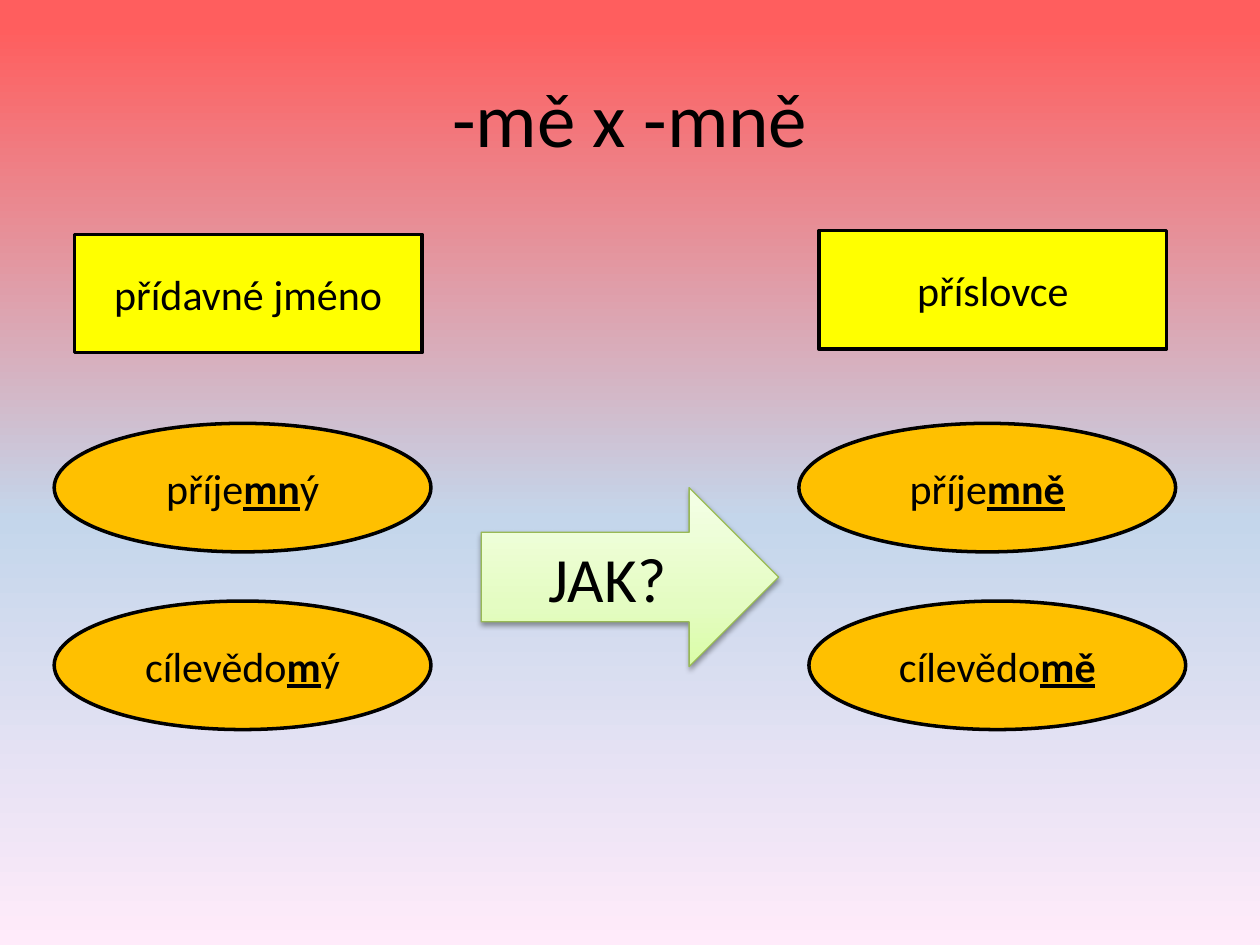
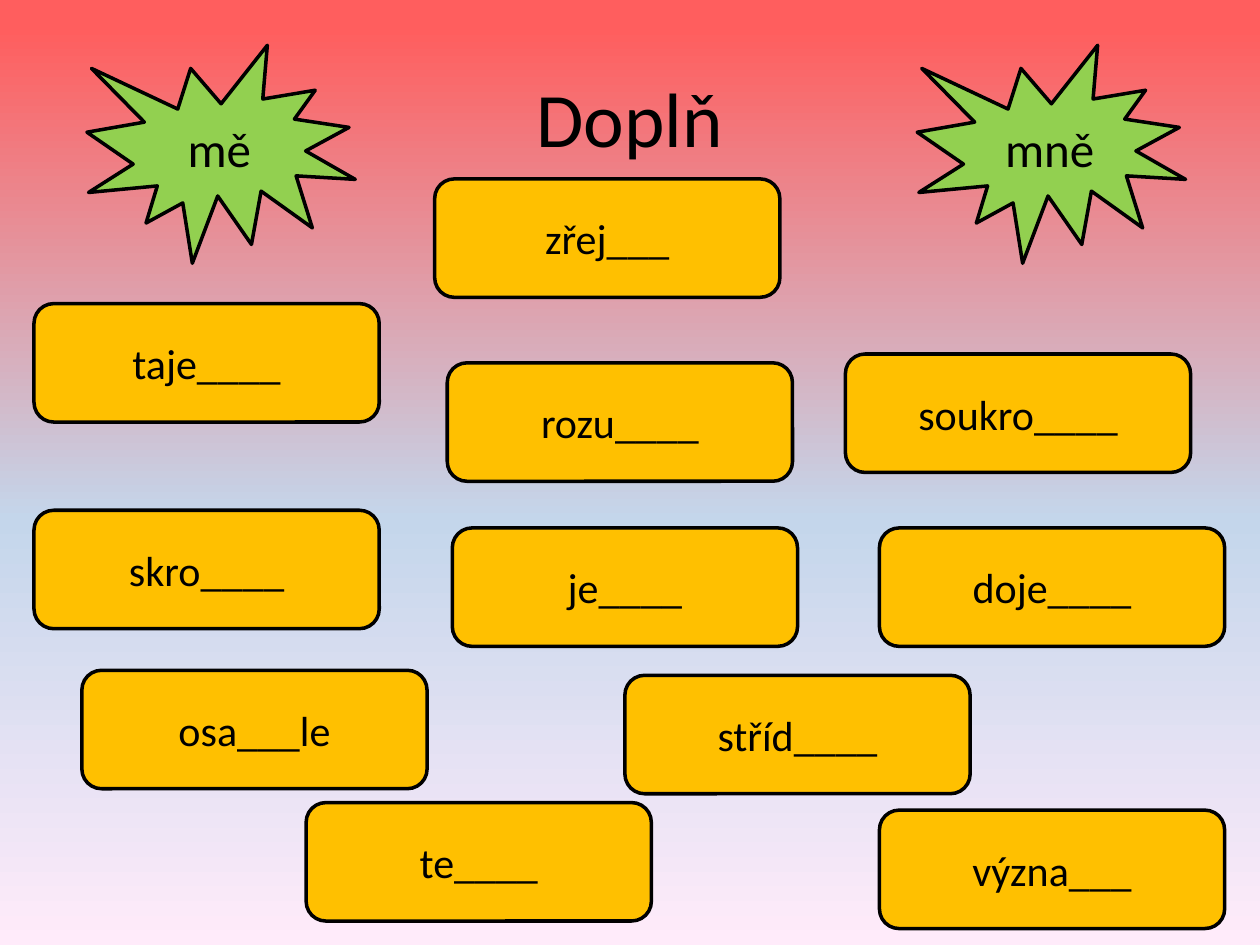
"""Build two Czech spelling slides about -mě and -mně."""
from dataclasses import dataclass

from lxml.etree import SubElement
from pptx import Presentation
from pptx.dml.color import RGBColor
from pptx.dml.fill import FillFormat
from pptx.enum.shapes import MSO_SHAPE
from pptx.enum.text import MSO_ANCHOR, PP_ALIGN
from pptx.oxml.ns import qn
from pptx.oxml.xmlchemy import BaseOxmlElement
from pptx.presentation import Presentation as Deck
from pptx.shapes.autoshape import Shape
from pptx.slide import Slide
from pptx.text.text import TextFrame
from pptx.util import Inches, Pt

FONT = "Calibri"
HUES = {
    "ink": "000000", "head": "FFFF00", "word": "FFC000", "star": "92D050",
    "edge": "98B955", "red": "FF5E5E", "blue": "C4D6EB", "pink": "FFEBFA",
    "lime": "DAFDA7", "mint": "E4FCC2", "pale": "F5FFE7",
}
SKY = [(3, "red"), (55, "blue"), (100, "pink")]
LEAF = [(0, "lime"), (35, "mint"), (100, "pale")]


@dataclass(frozen=True)
class Style:
    form: MSO_SHAPE
    width: float
    height: float
    fill: str
    size: int = 24
    line: str = "ink"
    weight: float = 2


HEAD = Style(MSO_SHAPE.RECTANGLE, 2.76, 0.94, "head")
OVAL = Style(MSO_SHAPE.OVAL, 2.99, 1.02, "word")
CARD = Style(MSO_SHAPE.ROUNDED_RECTANGLE, 2.74, 0.94, "word")
STAR = Style(MSO_SHAPE.EXPLOSION1, 2.13, 1.73, "star", 28)
ARROW = Style(MSO_SHAPE.RIGHT_ARROW, 2.36, 1.42, "mint", 36, "edge", 0.75)


@dataclass(frozen=True)
class Item:
    style: Style
    left: float
    top: float
    text: str


RULE = [
    Item(HEAD, 0.59, 1.86, "přídavné jméno"),
    Item(HEAD, 6.5, 1.83, "příslovce"),
    Item(OVAL, 0.43, 3.36, "příje*mn*ý"),
    Item(OVAL, 6.34, 3.36, "příje*mně*"),
    Item(OVAL, 6.42, 4.77, "cílevědo*mě*"),
    Item(OVAL, 0.43, 4.77, "cílevědo*m*ý"),
]
TASK = [
    Item(STAR, 0.69, 0.36, "mě"),
    Item(STAR, 7.28, 0.36, "mně"),
    Item(CARD, 0.27, 2.41, "taje____"),
    Item(CARD, 3.55, 2.88, "rozu____"),
    Item(CARD, 2.43, 6.37, "te____"),
    Item(CARD, 6.98, 6.43, "význa___"),
    Item(CARD, 0.27, 4.05, "skro____"),
    Item(CARD, 3.59, 4.19, "je____"),
    Item(CARD, 6.98, 4.19, "doje____"),
    Item(CARD, 3.45, 1.42, "zřej___"),
    Item(CARD, 0.65, 5.32, "osa___le"),
    Item(CARD, 4.96, 5.36, "stříd____"),
    Item(CARD, 6.71, 2.81, "soukro____"),
]


def tint(name: str) -> RGBColor:
    return RGBColor.from_string(HUES[name])


def blend(fill: FillFormat, node: BaseOxmlElement,
          stops: list[tuple[int, str]], angle: int) -> None:
    fill.gradient()
    fill.gradient_angle = angle
    group = next(node.iter(qn("a:gsLst")))
    group.clear()
    for place, name in stops:
        stop = SubElement(group, qn("a:gs"), pos=str(place * 1000))
        SubElement(stop, qn("a:srgbClr"), val=HUES[name])


def write(frame: TextFrame, text: str, size: int) -> None:
    frame.word_wrap = True
    frame.vertical_anchor = MSO_ANCHOR.MIDDLE
    para = frame.paragraphs[0]
    para.alignment = PP_ALIGN.CENTER
    for index, part in enumerate(text.split("*")):
        if part:
            run = para.add_run()
            run.text = part
            font = run.font
            font.name, font.size = FONT, Pt(size)
            font.color.rgb = tint("ink")
            font.bold = font.underline = index % 2 == 1


def draw(slide: Slide, item: Item) -> Shape:
    style = item.style
    shape = slide.shapes.add_shape(
        style.form, Inches(item.left), Inches(item.top),
        Inches(style.width), Inches(style.height))
    shape.shadow.inherit = False
    shape.fill.solid()
    shape.fill.fore_color.rgb = tint(style.fill)
    shape.line.color.rgb = tint(style.line)
    shape.line.width = Pt(style.weight)
    write(shape.text_frame, item.text, style.size)
    return shape


def shade(shape: Shape) -> None:
    effects = next(shape.element.iter(qn("a:effectLst")))
    shadow = SubElement(effects, qn("a:outerShdw"), blurRad=str(Pt(3.1)),
                        dist=str(Pt(1.6)), dir="5400000", rotWithShape="0")
    color = SubElement(shadow, qn("a:srgbClr"), val=HUES["ink"])
    SubElement(color, qn("a:alpha"), val="38000")


def start(deck: Deck, title: str, items: list[Item]) -> Slide:
    slide = deck.slides.add_slide(deck.slide_layouts[6])
    blend(slide.background.fill, slide.element, SKY, 270)
    box = slide.shapes.add_textbox(
        Inches(0.5), Inches(0.3), Inches(9), Inches(1.25))
    write(box.text_frame, title, 44)
    for item in items:
        draw(slide, item)
    return slide


def main() -> None:
    deck = Presentation()
    deck.slide_width, deck.slide_height = Inches(10), Inches(7.5)
    slide = start(deck, "-mě x -mně", RULE)
    arrow = draw(slide, Item(ARROW, 3.82, 3.87, "JAK?"))
    blend(arrow.fill, arrow.element, LEAF, 90)
    shade(arrow)
    start(deck, "Doplň", TASK)
    deck.save("out.pptx")


if __name__ == "__main__":
    main()
